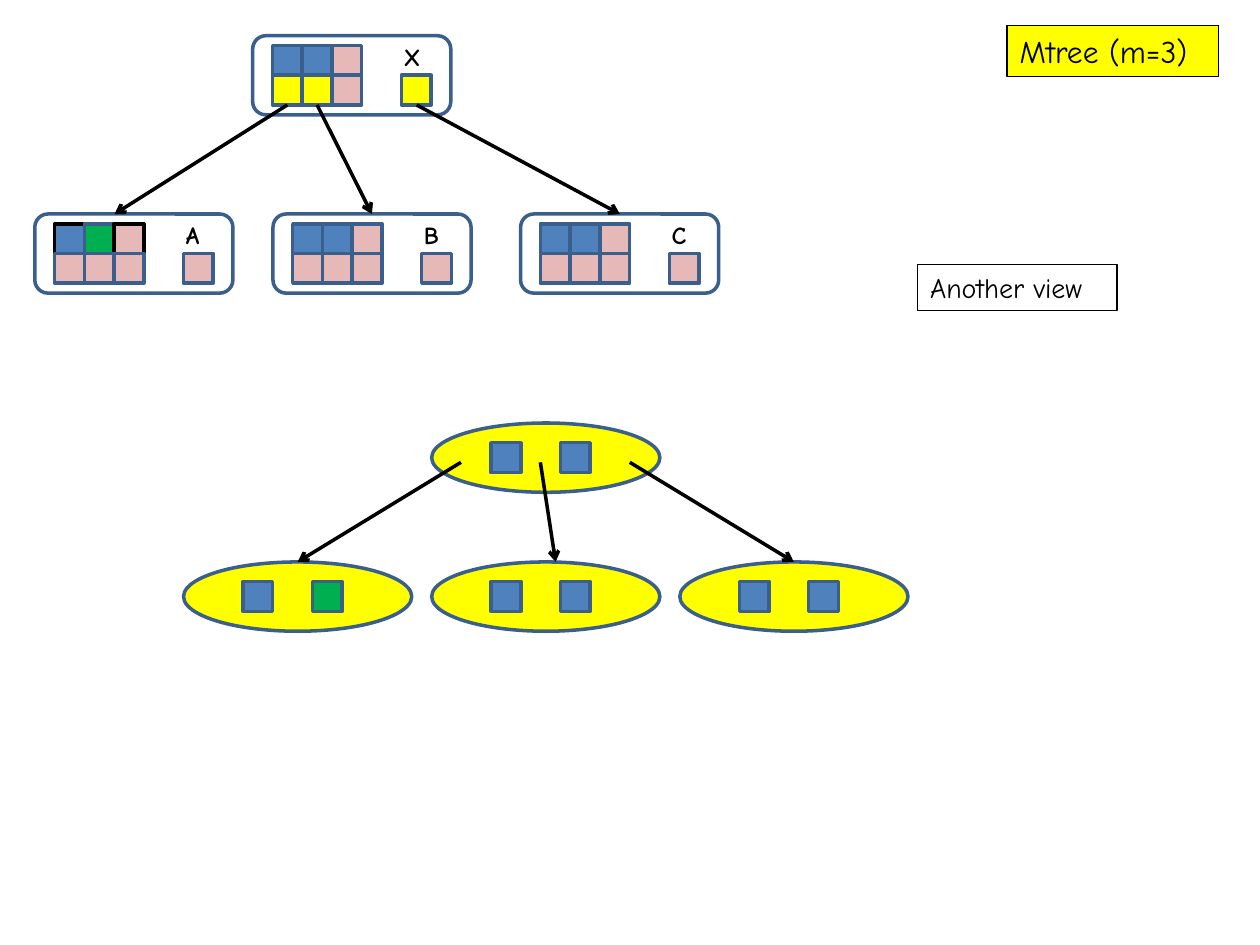
from lxml import etree
from pptx import Presentation
from pptx.dml.color import RGBColor
from pptx.enum import shapes, text
from pptx.oxml.ns import qn
from pptx.util import Pt

BLUE, PINK, YELLOW, GREEN = "4F81BD", "E6B9B8", "FFFF00", "00B050"
EDGE, BLACK = "3A5F8C", "000000"
FONT = "Comic Neue"
CELL = 17
NODE_SIZE = (113.2, 45.2)
OVAL_SIZE = (130.4, 39.6)
KIND = shapes.MSO_SHAPE


def color(value):
    return RGBColor.from_string(value)


def assign(target, values):
    for name, value in values.items():
        setattr(target, name, value)


def paint(shape, fill=None, line=EDGE, width=2):
    if fill:
        shape.fill.solid()
        shape.fill.fore_color.rgb = color(fill)
    else:
        shape.fill.background()
    shape.line.color.rgb = color(line)
    shape.line.width = Pt(width)


def add_figure(parent, kind, left, top, size, fill=None, line=EDGE):
    shape = parent.add_shape(kind, Pt(left), Pt(top), *map(Pt, size))
    shape.shadow.inherit = False
    paint(shape, fill, line)


def add_cell(parent, left, top, fill, line=EDGE):
    add_figure(parent, KIND.RECTANGLE, left, top, (CELL, CELL), fill, line)


def write(shape, words, size, bold=False):
    frame = shape.text_frame
    assign(frame, {"word_wrap": False, "auto_size": text.MSO_AUTO_SIZE.NONE,
                   "vertical_anchor": text.MSO_ANCHOR.TOP})
    para = frame.paragraphs[0]
    para.alignment = text.PP_ALIGN.LEFT
    span = para.add_run()
    span.text = words
    assign(span.font, {"name": FONT, "size": Pt(size), "bold": bold})
    span.font.color.rgb = color(BLACK)


def add_label(parent, box, words, size, bold=False):
    label = parent.add_textbox(*map(Pt, box))
    write(label, words, size, bold)
    return label


def add_arrow(page, start, end):
    arrow = page.shapes.add_connector(
        shapes.MSO_CONNECTOR.STRAIGHT, *map(Pt, (*start, *end)))
    arrow.line.color.rgb = color(BLACK)
    arrow.line.width = Pt(2)
    etree.SubElement(arrow.line._get_or_add_ln(), qn("a:tailEnd"), type="arrow")
    etree.SubElement(arrow._element.spPr, qn("a:effectLst"))


def add_node(page, left, top, name, keys, links=(PINK,) * 4, lines=(EDGE,) * 3):
    parts = page.shapes.add_group_shape().shapes
    add_figure(parts, KIND.ROUNDED_RECTANGLE, left, top, NODE_SIZE)
    for column, (fill, line) in enumerate(zip(keys, lines)):
        add_cell(parts, left + 11.3 + column * CELL, top + 5.6, fill, line)
    for offset, fill in zip((11.3, 28.3, 45.3, 85), links):
        add_cell(parts, left + offset, top + 5.6 + CELL, fill)
    add_label(parts, (left + 79.2, top, 24.5, 24.2), name, 14, True)


def add_oval(page, left, top, fills):
    parts = page.shapes.add_group_shape().shapes
    add_figure(parts, KIND.OVAL, left, top, OVAL_SIZE, YELLOW)
    for offset, fill in zip((34, 73.6), fills):
        add_cell(parts, left + offset, top + 11.3, fill)


def add_array_tree(page, left, top):
    root = left + 124.5
    child_top = top + 101.9
    keys = (BLUE, BLUE, PINK)
    add_node(page, root, top, "X", keys, (YELLOW, YELLOW, PINK, YELLOW))
    add_node(page, left, child_top, "A", (BLUE, GREEN, PINK),
             lines=(BLACK, EDGE, BLACK))
    add_node(page, left + 136.1, child_top, "B", keys)
    add_node(page, left + 277.6, child_top, "C", keys)
    for start, end in ((19.8, 45.6), (36.8, 192.6), (93.7, 334.3)):
        add_arrow(page, (root + start, top + 39.6), (left + end, child_top))


def add_oval_tree(page, left, top):
    root = left + 141.8
    child_top = top + 79.4
    add_oval(page, root, top, (BLUE, BLUE))
    for column, last in enumerate((GREEN, BLUE, BLUE)):
        add_oval(page, left + column * 141.8, child_top, (BLUE, last))
    for start, end in ((16.7, 65.2), (62.1, 212.6), (113.2, 348.7)):
        add_arrow(page, (root + start, top + 22.5), (left + end, child_top))


def add_title(page, box):
    title = page.shapes.title
    assign(title, dict(zip(("left", "top", "width", "height"), map(Pt, box))))
    paint(title, YELLOW, BLACK, 0.75)
    write(title, "Mtree (m=3)", 18)


def main():
    deck = Presentation()
    assign(deck, {"slide_width": Pt(720), "slide_height": Pt(540)})
    page = deck.slides.add_slide(deck.slide_layouts[5])
    add_title(page, (575.5, 14.6, 121, 29.1))
    add_array_tree(page, 19.9, 20.4)
    caption = add_label(page.shapes, (524.4, 151, 114, 26.6), "Another view", 16)
    paint(caption, None, BLACK, 0.75)
    add_oval_tree(page, 104.9, 241.7)
    deck.save("out.pptx")


if __name__ == "__main__":
    main()
